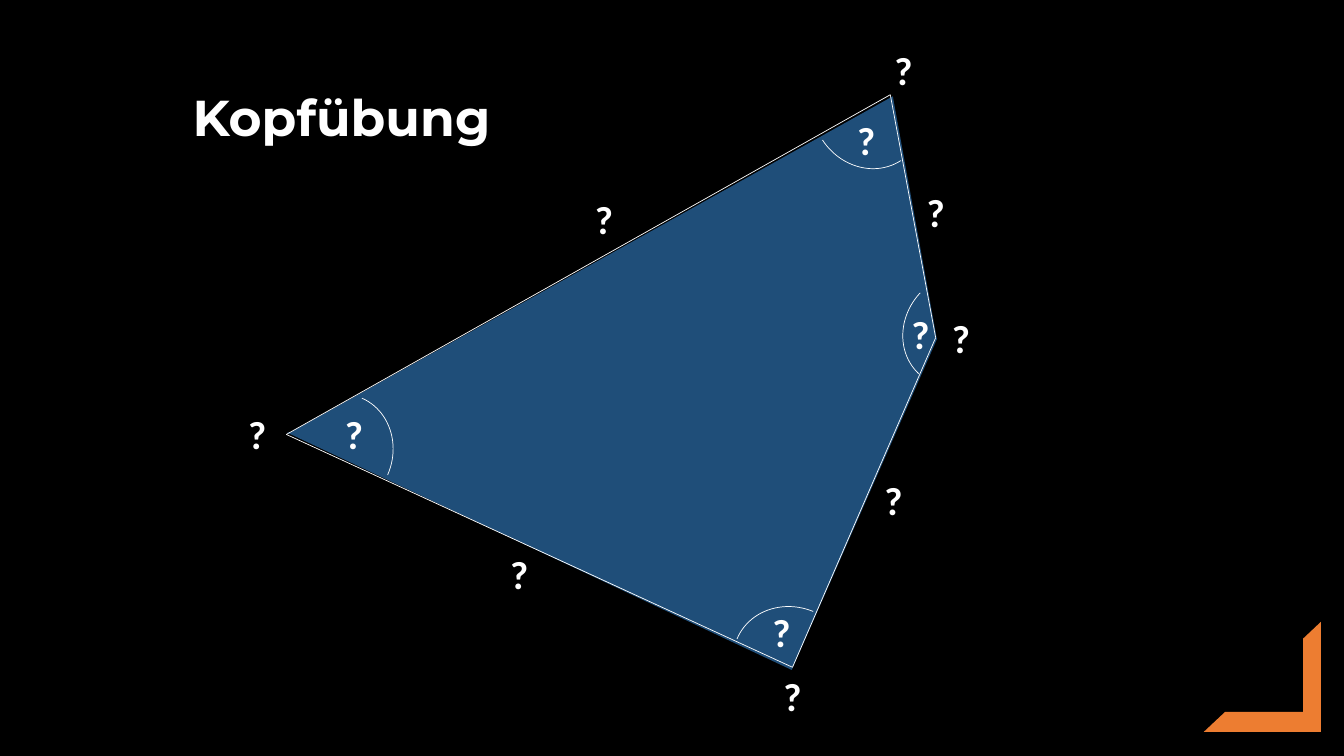
from dataclasses import dataclass

from lxml.etree import SubElement
from pptx import Presentation
from pptx.dml.color import RGBColor
from pptx.enum.shapes import MSO_CONNECTOR, MSO_SHAPE
from pptx.enum.text import MSO_ANCHOR, PP_ALIGN
from pptx.oxml.ns import qn
from pptx.util import Inches, Pt


@dataclass(frozen=True)
class Theme:
    """Colours, fonts and sizes of the slide."""
    background: RGBColor = RGBColor(0x00, 0x00, 0x00)
    light: RGBColor = RGBColor(0xFF, 0xFF, 0xFF)
    area: RGBColor = RGBColor(0x1F, 0x4E, 0x79)
    accent: RGBColor = RGBColor(0xED, 0x7D, 0x31)
    title_font: str = "Montserrat"
    label_font: str = "Calibri"
    title_size: Pt = Pt(36)
    label_size: Pt = Pt(28)
    line_width: Pt = Pt(0.5)


@dataclass(frozen=True)
class Box:
    """A rectangle in inches."""
    left: float
    top: float
    width: float
    height: float

    def inner(self, left, top, width, height):
        """Return a box whose position is measured from this one."""
        return Box(self.left + left, self.top + top, width, height)

    def lengths(self):
        """Return left, top, width and height as slide lengths."""
        return [Inches(value) for value in (self.left, self.top, self.width, self.height)]


THEME = Theme()

TRIANGLES = [
    ((1.22, 1.64, 5.53, 3.59), 25.2, 0.983),
    ((0.51, 0.99, 6.51, 2.45), -8.3, 0.987),
]
CORNERS = [(0.71, 3.9), (6.7, 0.53), (7.15, 2.94), (5.73, 6.21)]
ARC_SIZE = (1.08, 1.19)
ARCS = [
    ((0.68, 3.49), 23.7),
    ((5.19, 5.56), 292.3),
    ((6.85, 2.27), 223.3),
    ((5.94, 0.09), 146.9),
]
LABEL_SIZE = (0.84, 0.57)
ANGLE_LABELS = [(0.96, 3.61), (6.04, 0.69), (6.58, 2.62), (5.2, 5.58)]
CORNER_LABELS = [(6.41, 0), (6.98, 2.66), (0, 3.61), (5.31, 6.21)]
SIDE_LABELS = [(3.44, 1.48), (2.6, 5), (6.73, 1.41), (6.31, 4.27)]


def style_text(frame, text, font_name, size, alignment):
    """Write one bold light paragraph into a text frame."""
    frame.word_wrap = True
    paragraph = frame.paragraphs[0]
    paragraph.text = text
    paragraph.alignment = alignment
    font = paragraph.font
    font.name, font.size, font.bold = font_name, size, True
    font.color.rgb = THEME.light


def add_title(slide, box, text):
    """Place the title placeholder in the box."""
    title = slide.shapes.title
    title.left, title.top, title.width, title.height = box.lengths()
    title.text_frame.vertical_anchor = MSO_ANCHOR.MIDDLE
    style_text(title.text_frame, text, THEME.title_font, THEME.title_size, PP_ALIGN.LEFT)


def add_filled(slide, kind, box, color, rotation, adjustments):
    """Add a rotated preset shape with a fill and no outline."""
    shape = slide.shapes.add_shape(kind, *box.lengths())
    shape.shadow.inherit = False
    shape.rotation = rotation
    for index, value in enumerate(adjustments):
        shape.adjustments[index] = value
    shape.fill.solid()
    shape.fill.fore_color.rgb = color
    shape.line.fill.background()


def style_line(line):
    """Give a line the thin light stroke."""
    line.color.rgb = THEME.light
    line.width = THEME.line_width


def add_angle_arc(slide, box, rotation):
    """Draw the arc that marks one angle."""
    arc = slide.shapes.add_shape(MSO_SHAPE.ARC, *box.lengths())
    arc.shadow.inherit = False
    arc.rotation = rotation
    arc.fill.background()
    style_line(arc.line)


def add_side(slide, box, start, end):
    """Draw one side between two corners measured from the box."""
    points = [Inches(origin + offset)
              for corner in (start, end)
              for origin, offset in zip((box.left, box.top), corner)]
    side = slide.shapes.add_connector(MSO_CONNECTOR.STRAIGHT, *points)
    style_line(side.line)
    SubElement(side._element.spPr, qn("a:effectLst"))


def add_label(slide, box):
    """Add one question mark."""
    label = slide.shapes.add_textbox(*box.lengths())
    style_text(label.text_frame, "?", THEME.label_font, THEME.label_size, PP_ALIGN.CENTER)


def add_quadrilateral(slide, box):
    """Draw the quadrilateral with its angles, labels and sides."""
    for place, rotation, apex in TRIANGLES:
        add_filled(slide, MSO_SHAPE.ISOSCELES_TRIANGLE, box.inner(*place),
                   THEME.area, rotation, [apex])
    for place, rotation in ARCS:
        add_angle_arc(slide, box.inner(*place, *ARC_SIZE), rotation)
    for place in ANGLE_LABELS + CORNER_LABELS + SIDE_LABELS:
        add_label(slide, box.inner(*place, *LABEL_SIZE))
    for start, end in zip(CORNERS, CORNERS[1:] + CORNERS[:1]):
        add_side(slide, box, start, end)


def main():
    """Build and save the presentation."""
    presentation = Presentation()
    presentation.slide_width = Inches(13.33)
    presentation.slide_height = Inches(7.5)
    slide = presentation.slides.add_slide(presentation.slide_layouts.get_by_name("Title Only"))
    slide.background.fill.solid()
    slide.background.fill.fore_color.rgb = THEME.background
    add_title(slide, Box(1.81, 0.8, 7.78, 0.71), "Kopfübung")
    add_filled(slide, MSO_SHAPE.HALF_FRAME, Box(11.94, 6.17, 1.16, 1.09),
               THEME.accent, 180, [0.181, 0.162])
    add_quadrilateral(slide, Box(2.13, 0.41, 7.82, 6.78))
    presentation.save("out.pptx")


if __name__ == "__main__":
    main()
